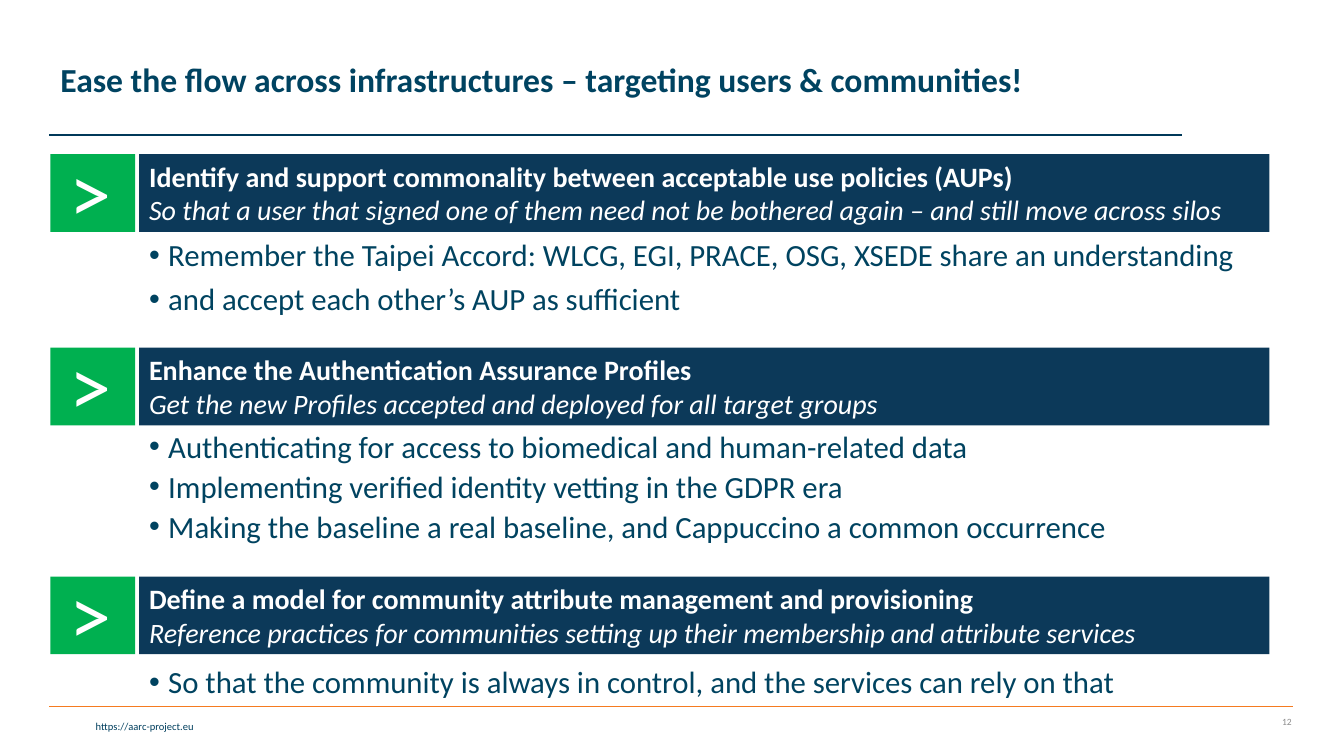
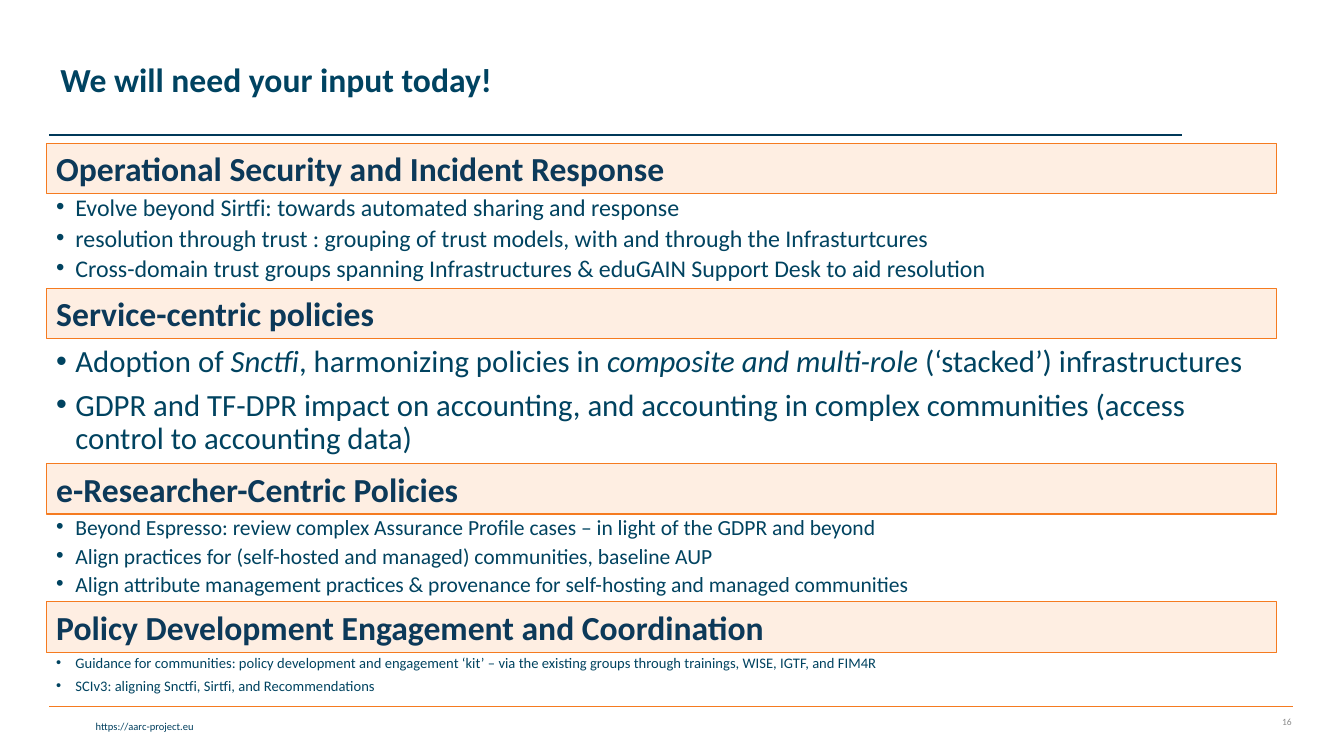
from dataclasses import dataclass

from lxml.etree import SubElement
from pptx import Presentation
from pptx.dml.color import RGBColor
from pptx.enum.shapes import MSO_CONNECTOR, MSO_SHAPE
from pptx.enum.text import MSO_ANCHOR, PP_ALIGN
from pptx.oxml.ns import qn
from pptx.util import Emu, Pt


@dataclass(frozen=True)
class Theme:
    font: str = "Calibri"
    title: str = "004361"
    body: str = "004360"
    foot: str = "003F5E"
    number: str = "8C8C8C"
    rule: str = "003959"
    orange: str = "F57B20"
    peach: str = "FEEEE2"
    navy: str = "0C3959"
    green: str = "00B050"
    white: str = "FFFFFF"
    title_size: float = 24
    head_size: float = 24
    bar_size: float = 20
    body_size: float = 22
    mark_size: float = 60
    foot_size: float = 7.5
    number_size: float = 6.8


THEME = Theme()
PX = 9144
INDENT = 19

GOALS = [
    (153, 80, 95, 0.9,
     "Identify and support commonality between acceptable use policies (AUPs)",
     "So that a user that signed one of them need not be bothered again – and still move across silos",
     ["Remember the Taipei Accord: WLCG, EGI, PRACE, OSG, XSEDE share an understanding",
      "and accept each other’s AUP as sufficient"]),
    (345, 81, 129, 0.8,
     "Enhance the Authentication Assurance Profiles",
     "Get the new Profiles accepted and deployed for all target groups",
     ["Authenticating for access to biomedical and human-related data",
      "Implementing verified identity vetting in the GDPR era",
      "Making the baseline a real baseline, and Cappuccino a common occurrence"]),
    (572, 85, 54, 0.9,
     "Define a model for community attribute management and provisioning",
     "Reference practices for communities setting up their membership and attribute services",
     ["So that the community is always in control, and the services can rely on that"]),
]

TOPICS = [
    (142, 95, 17.1, 0.7, "Operational Security and Incident Response",
     ["Evolve beyond Sirtfi: towards automated sharing and response",
      "resolution through trust : grouping of trust models, with and through the Infrasturtcures",
      "Cross-domain trust groups spanning Infrastructures & eduGAIN Support Desk to aid resolution"]),
    (286, 129, THEME.body_size, 0.9, "Service-centric policies",
     [[("Adoption of ", ""), ("Snctfi", "i"), (", harmonizing policies in ", ""),
       ("composite and multi-role ", "i"), ("(‘stacked’) infrastructures", "")],
      "GDPR and TF-DPR impact on accounting, and accounting in complex communities "
      "(access control to accounting data)"]),
    (460, 90, 15.4, 0.7, "e-Researcher-Centric Policies",
     ["Beyond Espresso: review complex Assurance Profile cases – in light of the GDPR and beyond",
      "Align practices for (self-hosted and managed) communities, baseline AUP",
      "Align attribute management practices & provenance for self-hosting and managed communities"]),
    (597, 47, 10.4, 0.7, "Policy Development Engagement and Coordination",
     ["Guidance for communities: policy development and engagement ‘kit’ – via the existing groups "
      "through trainings, WISE, IGTF, and FIM4R",
      "SCIv3: aligning Snctfi, Sirtfi, and Recommendations"]),
]


def px(*sizes):
    return [Emu(size * PX) for size in sizes]


def rgb(color):
    return RGBColor.from_string(color)


def add_rule(slide, left, right, top, color):
    rule = slide.shapes.add_connector(MSO_CONNECTOR.STRAIGHT, *px(left, top, right, top))
    rule.line.color.rgb = rgb(color)
    rule.line.width = Pt(1)
    SubElement(rule.element.spPr, qn("a:effectLst"))


def add_panel(slide, box, fill, line=None):
    panel = slide.shapes.add_shape(MSO_SHAPE.RECTANGLE, *px(*box))
    panel.shadow.inherit = False
    panel.fill.solid()
    panel.fill.fore_color.rgb = rgb(fill)
    if line:
        panel.line.color.rgb = rgb(line)
        panel.line.width = Pt(0.75)
    else:
        panel.line.fill.background()
    return panel


def add_bullet(para):
    props = para._p.get_or_add_pPr()
    props.set("marL", str(INDENT * PX))
    props.set("indent", str(-INDENT * PX))
    SubElement(props, qn("a:buFont"), typeface="Arial")
    SubElement(props, qn("a:buChar"), char="•")


def add_text(slide, box, paras, *, size, color, flags="", fill=None, line=None,
             align=PP_ALIGN.LEFT, anchor=MSO_ANCHOR.TOP, space=1.0, bullet=False):
    if fill:
        shape = add_panel(slide, box, fill, line)
    else:
        shape = slide.shapes.add_textbox(*px(*box))
    frame = shape.text_frame
    frame.word_wrap = True
    frame.vertical_anchor = anchor
    for index, item in enumerate(paras):
        para = frame.add_paragraph() if index else frame.paragraphs[0]
        if bullet:
            add_bullet(para)
            if index:
                para.space_before = Pt(7.5)
        para.alignment = align
        para.line_spacing = space
        runs = [(item, flags)] if isinstance(item, str) else item
        for words, marks in runs:
            run = para.add_run()
            run.text = words
            font = run.font
            font.name = THEME.font
            font.size = Pt(size)
            font.color.rgb = rgb(color)
            font.bold = "b" in marks
            font.italic = "i" in marks


def add_list(slide, box, items, size, space):
    add_text(slide, box, items, size=size, color=THEME.body, space=space, bullet=True)


def add_base(deck, title, number):
    slide = deck.slides.add_slide(deck.slide_layouts[6])
    add_rule(slide, 49, 1282, 701, THEME.orange)
    add_text(slide, (3, 709, 199, 23), ["https://aarc-project.eu"],
             size=THEME.foot_size, color=THEME.foot, align=PP_ALIGN.RIGHT)
    add_rule(slide, 49, 1172, 134, THEME.rule)
    add_text(slide, (1210, 701, 81, 30), [str(number)], size=THEME.number_size,
             color=THEME.number, align=PP_ALIGN.RIGHT, anchor=MSO_ANCHOR.MIDDLE)
    add_text(slide, (50, 8, 1051, 145), [title], size=THEME.title_size,
             color=THEME.title, flags="b", anchor=MSO_ANCHOR.MIDDLE, space=0.9)
    return slide


def add_goal(slide, top, drop, height, space, head, aim, items):
    add_text(slide, (138, top, 1121, 77), [[(head, "b")], [(aim, "i")]],
             size=THEME.bar_size, color=THEME.white, fill=THEME.navy)
    add_panel(slide, (50, top, 84, 77), THEME.green)
    add_text(slide, (59, top - 20, 70, 111), ["˃"], size=THEME.mark_size, color=THEME.white)
    add_list(slide, (138, top + drop, 1121, height), items, THEME.body_size, space)


def add_topic(slide, top, height, size, space, head, items):
    add_text(slide, (46, top, 1220, 50), [head], size=THEME.head_size, color=THEME.navy,
             flags="b", fill=THEME.peach, line=THEME.orange)
    add_list(slide, (46, top + 52, 1220, height), items, size, space)


def main():
    deck = Presentation()
    deck.slide_width, deck.slide_height = px(1333, 750)
    slide = add_base(
        deck, "Ease the flow across infrastructures – targeting users & communities!", 12)
    for goal in GOALS:
        add_goal(slide, *goal)
    slide = add_base(deck, "We will need your input today!", 16)
    for topic in TOPICS:
        add_topic(slide, *topic)
    deck.save("out.pptx")


if __name__ == "__main__":
    main()
